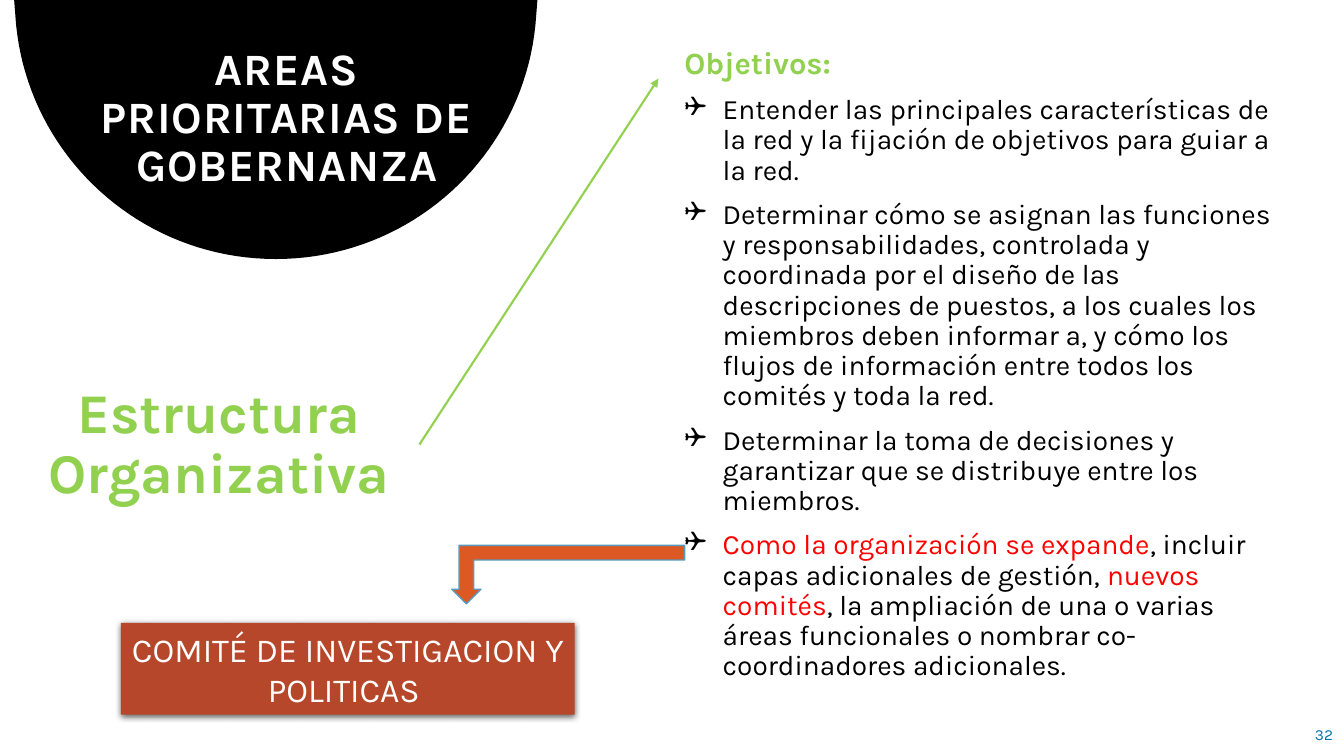
from lxml import etree
from pptx import Presentation
from pptx.dml.color import RGBColor
from pptx.enum.shapes import MSO_CONNECTOR, MSO_SHAPE
from pptx.enum.text import MSO_ANCHOR, PP_ALIGN
from pptx.oxml.ns import qn
from pptx.util import Inches, Pt

LEFT, CENTER, RIGHT = PP_ALIGN.LEFT, PP_ALIGN.CENTER, PP_ALIGN.RIGHT
TOP, MIDDLE = MSO_ANCHOR.TOP, MSO_ANCHOR.MIDDLE
FONT = "Karla"
COLORS = {"black": "000000", "white": "FFFFFF", "green": "92D050", "red": "FF0000",
          "number": "0074AF", "committee": "B7472A", "arrow": "DC5924", "edge": "579BBD"}

TITLE = "AREAS PRIORITARIAS DE GOBERNANZA"
AREA = "Estructura Organizativa"
COMMITTEE = "COMITÉ DE INVESTIGACION Y POLITICAS "
PAGE = "32"
HEADING = "Objetivos:"
# Each goal is a list of (text, colour) pieces.
GOALS = [
    [("Entender las principales características de la red y la fijación de objetivos "
      "para guiar a la red.", "black")],
    [("Determinar cómo se asignan las funciones y responsabilidades, controlada y "
      "coordinada por el diseño de las descripciones de puestos, a los cuales los "
      "miembros deben informar a, y cómo los flujos de información entre todos los "
      "comités y toda la red.", "black")],
    [("Determinar la toma de decisiones y garantizar que se distribuye entre los "
      "miembros.", "black")],
    [("Como la organización se expande", "red"),
     (", incluir capas adicionales de gestión, ", "black"),
     ("nuevos comités", "red"),
     (", la ampliación de una o varias áreas funcionales o nombrar co-coordinadores "
      "adicionales.", "black")],
]

# Left, top, width, height in inches
BOXES = {"title": (0.61, 0, 4.47, 1.48), "area": (0.26, 3.77, 3.82, 1.91),
         "goals": (6.69, 0.43, 6.2, 6.4), "page": (12.85, 7.09, 0.47, 0.4),
         "committee": (1.2, 6.18, 4.5, 0.91), "arrow": (4.48, 5.41, 2.31, 0.58)}
LINK_START, LINK_END = (4.16, 4.41), (6.53, 0.78)
DOME_CENTER, DOME_BOTTOM = 2.735, 2.57
# Right half of the dome as two curves, offsets from its centre line
DOME_CURVE = [(2.575, 0.25), (2.445, 1.55), (1.345, 2.57), (0, 2.57)]
DOME_HALF_WIDTH, CURVE_STEPS = 2.595, 40


def rgb(name):
    return RGBColor.from_string(COLORS[name])


def inches(values):
    return [Inches(value) for value in values]


def add_xml(parent, tag, **attributes):
    return etree.SubElement(parent, qn(tag), attributes)


def set_frame(frame, anchor=TOP, wrap=True, **margins):
    frame.word_wrap = wrap
    frame.vertical_anchor = anchor
    for side, value in margins.items():
        setattr(frame, f"margin_{side}", Inches(value))


def write(paragraph, pieces, size, bold=False, tracking=None, **formats):
    for key, value in formats.items():
        setattr(paragraph, key, value)
    for text, color in pieces:
        run = paragraph.add_run()
        run.text = text
        for key, value in {"name": FONT, "size": Pt(size), "bold": bold}.items():
            setattr(run.font, key, value)
        run.font.color.rgb = rgb(color)
        if tracking:
            run._r.get_or_add_rPr().set("spc", str(tracking))


def add_bullet(paragraph, indent=0.38):
    properties = paragraph._p.get_or_add_pPr()
    properties.set("marL", str(Inches(indent)))
    properties.set("indent", str(-Inches(indent)))
    add_xml(add_xml(properties, "a:buClr"), "a:srgbClr", val=COLORS["black"])
    add_xml(properties, "a:buFont", typeface="Wingdings")
    add_xml(properties, "a:buChar", char="❑")


def add_filled(shapes, kind, box, fill):
    shape = shapes.add_shape(kind, *inches(BOXES[box]))
    shape.shadow.inherit = False
    shape.fill.solid()
    shape.fill.fore_color.rgb = rgb(fill)
    shape.line.fill.background()
    return shape


def bezier(points, t):
    weights = ((1 - t) ** 3, 3 * t * (1 - t) ** 2, 3 * t ** 2 * (1 - t), t ** 3)
    return tuple(sum(w * p[axis] for w, p in zip(weights, points)) for axis in (0, 1))


def add_dome(shapes):
    half = [(DOME_HALF_WIDTH, 0)]
    half += [bezier(DOME_CURVE, step / CURVE_STEPS) for step in range(CURVE_STEPS + 1)]
    outline = half + [(-x, y) for x, y in reversed(half[:-1])]
    points = [(Inches(DOME_CENTER + x), Inches(y)) for x, y in outline]
    builder = shapes.build_freeform(*points[0])
    builder.add_line_segments(points[1:], close=True)
    dome = builder.convert_to_shape()
    dome.shadow.inherit = False
    dome.fill.solid()
    dome.fill.fore_color.rgb = rgb("black")
    dome.line.fill.background()


def add_text(shapes, box, text, color, size, frame_formats, **formats):
    frame = shapes.add_textbox(*inches(BOXES[box])).text_frame
    set_frame(frame, **frame_formats)
    write(frame.paragraphs[0], [(text, color)], size, **formats)
    return frame


def add_link(shapes):
    link = shapes.add_connector(MSO_CONNECTOR.STRAIGHT, *inches(LINK_START + LINK_END))
    link.line.color.rgb = rgb("green")
    link.line.width = Pt(1.5)
    add_xml(link.line._get_or_add_ln(), "a:tailEnd", type="triangle")
    add_xml(link._element.spPr, "a:effectLst")


def add_committee(shapes):
    committee = add_filled(shapes, MSO_SHAPE.RECTANGLE, "committee", "committee")
    shadow = add_xml(committee._element.spPr.find(qn("a:effectLst")), "a:outerShdw",
                     blurRad=str(Pt(4.5)), dist=str(Pt(1.5)), dir="5400000",
                     algn="ctr", rotWithShape="0")
    add_xml(add_xml(shadow, "a:srgbClr", val=COLORS["black"]), "a:alpha", val="63000")
    set_frame(committee.text_frame, MIDDLE)
    write(committee.text_frame.paragraphs[0], [(COMMITTEE, "white")], 24, alignment=CENTER)


def add_arrow(shapes):
    arrow = add_filled(shapes, MSO_SHAPE.BENT_UP_ARROW, "arrow", "arrow")
    arrow.rotation = 180
    arrow.line.color.rgb = rgb("edge")
    arrow.line.width = Pt(1)


def main():
    deck = Presentation()
    deck.slide_width, deck.slide_height = inches((13.33, 7.5))
    shapes = deck.slides.add_slide(deck.slide_layouts[6]).shapes

    add_dome(shapes)
    goal_formats = {"alignment": LEFT, "line_spacing": 0.9, "space_before": Pt(10)}
    goals = add_text(shapes, "goals", HEADING, "green", 22, {}, bold=True, **goal_formats)
    for pieces in GOALS:
        paragraph = goals.add_paragraph()
        write(paragraph, pieces, 20, **goal_formats)
        add_bullet(paragraph)
    add_text(shapes, "page", PAGE, "number", 11, {"anchor": MIDDLE, "wrap": False},
             alignment=RIGHT)
    add_text(shapes, "title", TITLE, "white", 32,
             {"left": 0.16, "top": 0.46, "right": 0.16, "bottom": 0.05},
             bold=True, tracking=60, alignment=CENTER, line_spacing=0.9)
    add_link(shapes)
    add_text(shapes, "area", AREA, "green", 40, {}, bold=True, alignment=CENTER,
             line_spacing=0.9, space_before=Pt(12))
    add_committee(shapes)
    add_arrow(shapes)
    deck.save("out.pptx")


if __name__ == "__main__":
    main()
